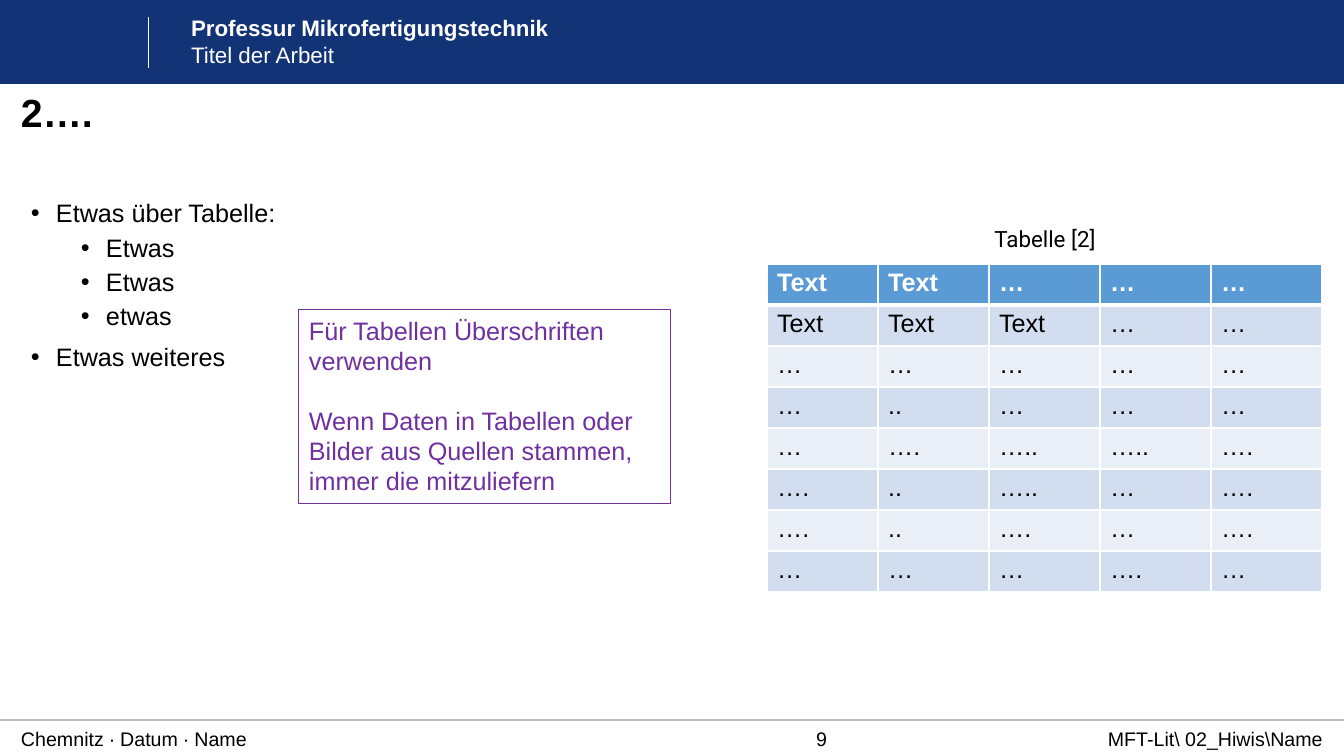
import dataclasses

import pptx
import pptx.dml.color
import pptx.enum.shapes
import pptx.enum.text
import pptx.oxml
import pptx.oxml.ns
import pptx.util

ALIGN = pptx.enum.text.PP_ALIGN
ANCHOR = pptx.enum.text.MSO_ANCHOR


@dataclasses.dataclass(frozen=True)
class Theme:
    font: str = "Arial"
    label: str = "Roboto"
    navy: str = "123375"
    white: str = "FFFFFF"
    black: str = "000000"
    purple: str = "7030A0"
    head: str = "5B9BD5"
    bands: tuple = ("D2DEEF", "EAEFF7")
    title: int = 28
    text: int = 18
    small: int = 16
    foot: int = 14


def px(num):
    return pptx.util.Emu(round(num * 914400 / 100.8))


def rgb(code):
    return pptx.dml.color.RGBColor.from_string(code)


def node(tag, inner="", **attrs):
    names = " ".join(f'{key}="{val}"' for key, val in attrs.items())
    space = pptx.oxml.ns.nsdecls("a")
    return pptx.oxml.parse_xml(f"<a:{tag} {space} {names}>{inner}</a:{tag}>")


class Page:
    """Draws styled elements on one slide."""

    def __init__(self, slide, theme):
        self.slide = slide
        self.theme = theme

    def place(self, shape, box):
        shape.left, shape.top, shape.width, shape.height = map(px, box)

    def frame(self, shape, anchor=ANCHOR.TOP, inset=True):
        frame = shape.text_frame
        frame.word_wrap = True
        frame.auto_size = pptx.enum.text.MSO_AUTO_SIZE.NONE
        frame.vertical_anchor = anchor
        frame.margin_left = frame.margin_right = px(10 if inset else 0)
        frame.margin_top = frame.margin_bottom = px(5 if inset else 0)
        return frame

    def line(self, frame, first, text, size, color=None, bold=False,
             align=ALIGN.LEFT, space=0, lead=1.0, font=None):
        para = frame.paragraphs[0] if first else frame.add_paragraph()
        para.alignment = align
        para.line_spacing = lead
        para.space_before = pptx.util.Pt(0 if first else space)
        run = para.add_run()
        run.text = text
        run.font.name = font or self.theme.font
        run.font.size = pptx.util.Pt(size)
        run.font.bold = bold
        run.font.color.rgb = rgb(color or self.theme.black)
        return para

    def rect(self, box, fill=None, line=None):
        kind = pptx.enum.shapes.MSO_SHAPE.RECTANGLE
        shape = self.slide.shapes.add_shape(kind, *map(px, box))
        shape.shadow.inherit = False
        if fill:
            shape.fill.solid()
            shape.fill.fore_color.rgb = rgb(fill)
        else:
            shape.fill.background()
        if line:
            shape.line.color.rgb = rgb(line)
            shape.line.width = pptx.util.Pt(0.75)
        else:
            shape.line.fill.background()
        return shape

    def rule(self, ends, color, width, alpha=100):
        kind = pptx.enum.shapes.MSO_CONNECTOR.STRAIGHT
        rule = self.slide.shapes.add_connector(kind, *map(px, ends))
        rule.line.color.rgb = rgb(color)
        rule.line.width = pptx.util.Pt(width)
        prop = rule._element.spPr
        tone = prop.find(".//" + pptx.oxml.ns.qn("a:srgbClr"))
        tone.append(node("alpha", val=alpha * 1000))
        prop.append(node("effectLst"))

    def label(self, box, text, size, anchor=ANCHOR.MIDDLE, inset=False, **style):
        shape = self.slide.shapes.add_textbox(*map(px, box))
        self.line(self.frame(shape, anchor, inset), True, text, size, **style)
        return shape

    def title(self, box, text):
        shape = self.slide.shapes.title
        self.place(shape, box)
        frame = self.frame(shape, inset=False)
        self.line(frame, True, text, self.theme.title, bold=True, lead=0.9)

    def list(self, box, items):
        shape = self.slide.placeholders[1]
        self.place(shape, box)
        frame = self.frame(shape)
        for num, (level, text) in enumerate(items):
            para = self.line(frame, num == 0, text, self.theme.text,
                             space=5 if level else 10, lead=0.9)
            para.level = level
            prop = para._p.get_or_add_pPr()
            prop.set("marL", str(px(25 + 50 * level)))
            prop.set("indent", str(-px(25)))
            prop.append(node("buFont", typeface=self.theme.font))
            prop.append(node("buChar", char="•"))

    def note(self, box, texts):
        color = self.theme.purple
        frame = self.frame(self.rect(box, line=color))
        for num, text in enumerate(texts):
            self.line(frame, num == 0, text, self.theme.text, color, space=21)

    def cell(self, cell, text, fill, color, head):
        prop = cell._tc.get_or_add_tcPr()
        tone = f'<a:solidFill><a:srgbClr val="{self.theme.white}"/></a:solidFill>'
        for side in "LRTB":
            width = 3 if head and side == "B" else 1
            prop.append(node("ln" + side, tone, w=width * 12700))
        cell.fill.solid()
        cell.fill.fore_color.rgb = rgb(fill)
        self.line(cell.text_frame, True, text, self.theme.text, color, head)

    def table(self, left, top, wide, high, rows):
        count = len(rows[0])
        box = (left, top, wide * count, high * len(rows))
        table = self.slide.shapes.add_table(len(rows), count, *map(px, box)).table
        table.horz_banding = False
        for col in table.columns:
            col.width = px(wide)
        for num, row in enumerate(rows):
            head = num == 0
            table.rows[num].height = px(high)
            fill = self.theme.head if head else self.theme.bands[(num - 1) % 2]
            color = self.theme.white if head else self.theme.black
            for col, text in enumerate(row):
                self.cell(table.cell(num, col), text, fill, color, head)


def main():
    deck = pptx.Presentation()
    deck.slide_width, deck.slide_height = px(1344), px(756)
    theme = Theme()
    page = Page(deck.slides.add_slide(deck.slide_layouts[1]), theme)

    page.rect((0, 0, 1344, 84), fill=theme.navy)
    page.rule((148, 17, 148, 68), theme.white, 0.5)
    page.rule((0, 720, 1344, 720), theme.black, 1, 40)
    head = page.label((181, 12, 1142, 65), "Professur Mikrofertigungstechnik",
                      theme.small, ANCHOR.TOP, True,
                      color=theme.white, bold=True, lead=0.9)
    page.line(head.text_frame, False, "Titel der Arbeit", theme.small,
              theme.white, space=2, lead=0.9)
    for left, width, text, align in (
        (21, 635, "Chemnitz ∙ Datum ∙ Name", ALIGN.LEFT),
        (513, 617, "9", ALIGN.CENTER),
        (910, 413, "MFT-Lit\\ 02_Hiwis\\Name", ALIGN.RIGHT),
    ):
        page.label((left, 720, width, 37), text, theme.foot, align=align)

    page.title((21, 94, 1301, 47), "2….")
    page.list((21, 196, 719, 504), (
        (0, "Etwas über Tabelle:"),
        (1, "Etwas"),
        (1, "Etwas"),
        (1, "etwas"),
        (0, "Etwas weiteres"),
    ))
    page.label((767, 196, 556, 61), "Tabelle [2]", theme.small, ANCHOR.BOTTOM,
               True, align=ALIGN.CENTER, lead=0.9, font=theme.label)
    page.note((299, 310, 372, 194), (
        "Für Tabellen Überschriften verwenden",
        "Wenn Daten in Tabellen oder Bilder aus Quellen stammen, "
        "immer die mitzuliefern",
    ))
    page.table(767, 264, 111, 41, (
        ("Text", "Text", "…", "…", "…"),
        ("Text", "Text", "Text", "…", "…"),
        ("…", "…", "…", "…", "…"),
        ("…", "..", "…", "…", "…"),
        ("…", "….", "…..", "…..", "…."),
        ("….", "..", "…..", "…", "…."),
        ("….", "..", "….", "…", "…."),
        ("…", "…", "…", "….", "…"),
    ))
    deck.save("out.pptx")


if __name__ == "__main__":
    main()
